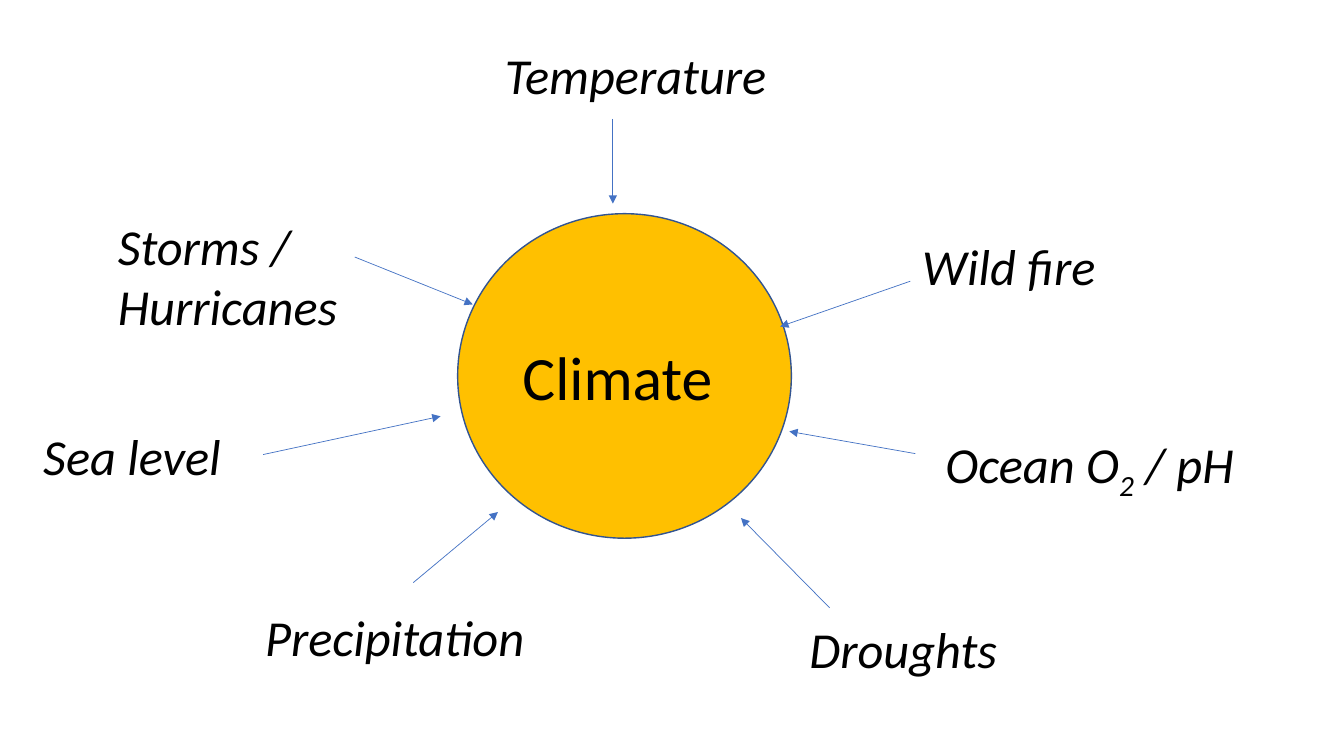
from lxml import etree
from pptx import Presentation, util as u
from pptx.dml.color import RGBColor
from pptx.enum import shapes, text
from pptx.oxml import ns

AMBER = RGBColor(0xFF, 0xC0, 0x00)
NAVY = RGBColor(0x32, 0x54, 0x91)
BLUE = RGBColor(0x44, 0x72, 0xC4)
BLACK = RGBColor(0, 0, 0)
FONT = "Calibri"
LINE_HEIGHT = 9.47

HUB = (34.05, 28.27, 24.83, 42.93)
FACTORS = [
    (("Temperature",), (36.83, 5.2, 22.95), 1, (45.6, 15.73, 45.6, 26.93)),
    (("Wild fire",), (67.88, 30.4, 16.05), 1, (67.73, 37.2, 58.05, 43.2)),
    (("Ocean O", "2", " / pH"), (69.6, 56.67, 27), 1, (68.1, 60, 58.73, 57.07)),
    (("Droughts",), (59.48, 81.07, 16.05), 1, (61.73, 80.4, 55.13, 68.53)),
    (("Precipitation",), (18.98, 79.47, 28.58), 1, (30.75, 77.07, 37.05, 67.73)),
    (("Sea level",), (2.48, 55.6, 16.05), 1, (19.58, 60.13, 32.78, 55.07)),
    (("Storms / Hurricanes",), (8.03, 27.73, 18.53), 1.85, (26.4, 34, 35.18, 40.27)),
]


def scale(area, shares):
    """Turn alternating x and y percentages into lengths of the area."""
    return [round(area[i % 2] * share / 100) for i, share in enumerate(shares)]


def style(span, size, italic=False):
    """Format one run of text."""
    span.font.name = FONT
    span.font.size = u.Pt(size)
    span.font.italic = italic
    span.font.color.rgb = BLACK


def add_hub(page, area):
    """Draw the central circle."""
    hub = page.shapes.add_shape(shapes.MSO_SHAPE.OVAL, *scale(area, HUB))
    hub.shadow.inherit = False
    hub.fill.solid()
    hub.fill.fore_color.rgb = AMBER
    hub.line.color.rgb = NAVY
    hub.line.width = u.Pt(1)
    hub.text_frame.vertical_anchor = text.MSO_ANCHOR.MIDDLE
    para = hub.text_frame.paragraphs[0]
    para.text = "Climate "
    para.alignment = text.PP_ALIGN.CENTER
    style(para.runs[0], 44)


def add_label(page, area, parts, place, lines):
    """Write a factor name, its second part lowered as a subscript."""
    box = page.shapes.add_textbox(*scale(area, (*place, LINE_HEIGHT * lines)))
    box.text_frame.word_wrap = True
    box.text_frame.auto_size = text.MSO_AUTO_SIZE.SHAPE_TO_FIT_TEXT
    para = box.text_frame.paragraphs[0]
    for index, part in enumerate(parts):
        span = para.add_run()
        span.text = part
        style(span, 36, italic=True)
        if index == 1:
            span._r.get_or_add_rPr().set("baseline", "-25000")


def add_arrow(page, area, ends):
    """Draw a thin arrow towards the circle."""
    arrow = page.shapes.add_connector(
        shapes.MSO_CONNECTOR.STRAIGHT, *scale(area, ends))
    arrow.line.color.rgb = BLUE
    arrow.line.width = u.Pt(0.5)
    etree.SubElement(arrow.line._get_or_add_ln(), ns.qn("a:tailEnd"), type="triangle")
    etree.SubElement(arrow._element.spPr, ns.qn("a:effectLst"))


def add_diagram(page, area):
    """Place the hub and the factors around it."""
    add_hub(page, area)
    for parts, place, lines, ends in FACTORS:
        add_label(page, area, parts, place, lines)
        add_arrow(page, area, ends)


def main():
    """Build the deck and save it."""
    deck = Presentation()
    deck.slide_width, deck.slide_height = u.Inches(13.33), u.Inches(7.5)
    page = deck.slides.add_slide(deck.slide_layouts[6])
    add_diagram(page, (deck.slide_width, deck.slide_height))
    deck.save("out.pptx")


if __name__ == "__main__":
    main()
